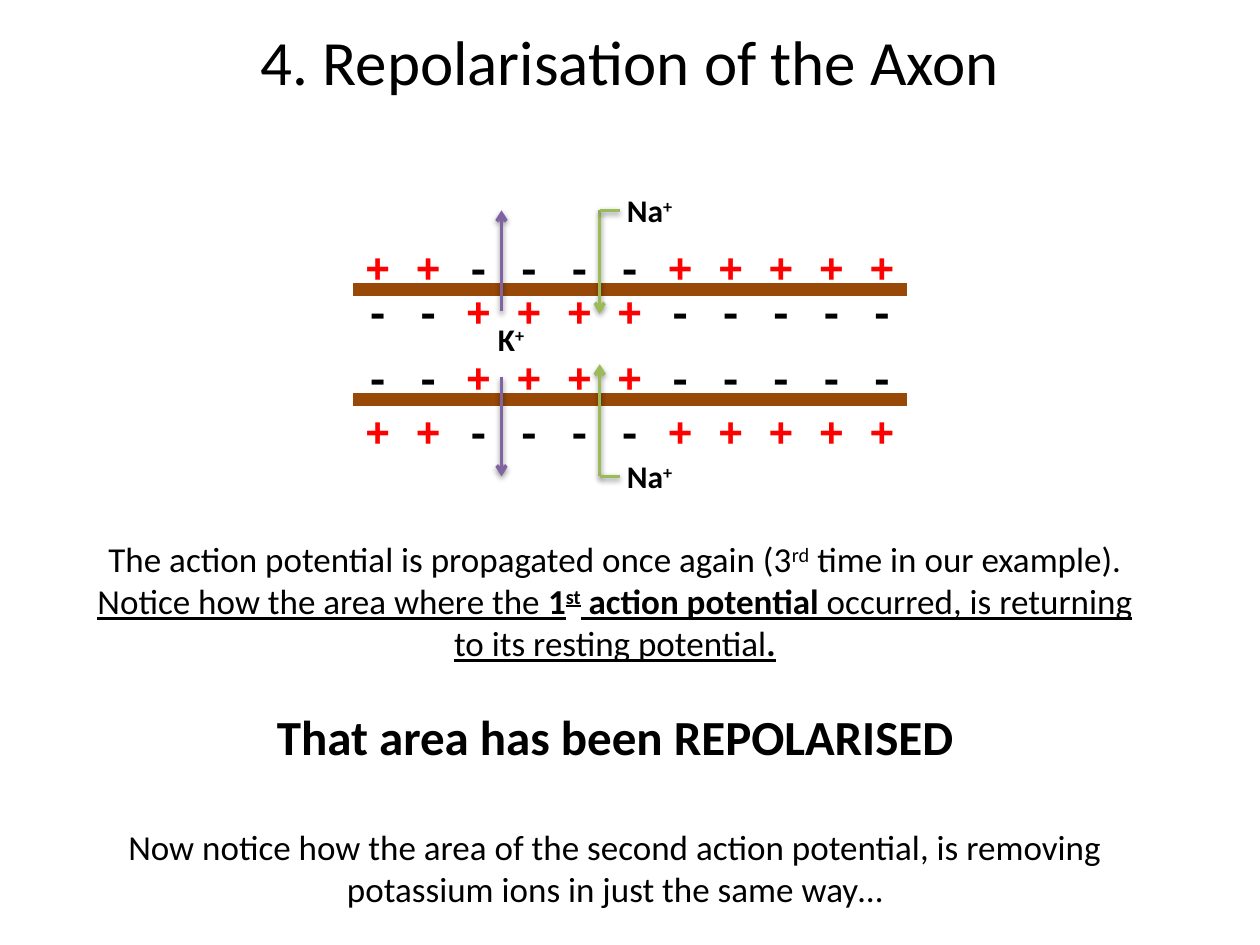
from lxml import etree
from pptx import Presentation
from pptx import util as u
from pptx.dml import color
from pptx.enum import shapes, text
from pptx.oxml import ns

Pt = u.Pt
COLORS = {
    "text": "000000",
    "positive": "FF0000",
    "membrane": "984807",
    "sodium": "9BBB59",
    "potassium": "8064A2",
}
SIGN_COLORS = {"+": "positive", "-": "text"}
REGION_SIZES = (2, 4, 5)  # ion pairs: resting, depolarised, resting
MEMBRANE_LEFT, MEMBRANE_RIGHT = 201.6, 518.4


def rgb(name):
    return color.RGBColor.from_string(COLORS[name])


def add_run(paragraph, content, size, bold=False, underline=False,
            raised=False, font="Calibri", ink="text"):
    run = paragraph.add_run()
    run.text = content
    run.font.name = font
    run.font.size = Pt(size)
    run.font.bold = bold
    run.font.underline = underline
    run.font.color.rgb = rgb(ink)
    if raised:
        run._r.get_or_add_rPr().set("baseline", "30000")


def add_text_box(container, left, top, width, height, centred=True):
    shape = container.add_textbox(Pt(left), Pt(top), Pt(width), Pt(height))
    frame = shape.text_frame
    frame.word_wrap = True
    frame.auto_size = text.MSO_AUTO_SIZE.SHAPE_TO_FIT_TEXT
    if centred:
        frame.paragraphs[0].alignment = text.PP_ALIGN.CENTER
    return frame


def add_ion_label(container, symbol, left, top):
    paragraph = add_text_box(container, left, top, 57, 29).paragraphs[0]
    add_run(paragraph, symbol, 18, bold=True)
    add_run(paragraph, "+", 18, bold=True, raised=True)


def add_line(container, start, end, ink, width, arrow=False, shadow=False):
    line = container.add_connector(
        shapes.MSO_CONNECTOR.STRAIGHT, *(Pt(value) for value in (*start, *end)))
    line.line.color.rgb = rgb(ink)
    line.line.width = Pt(width)
    properties = line._element.spPr
    if arrow:
        etree.SubElement(line.line._get_or_add_ln(), ns.qn("a:tailEnd"), type="arrow")
    effects = etree.SubElement(properties, ns.qn("a:effectLst"))
    if shadow:
        outer = etree.SubElement(
            effects, ns.qn("a:outerShdw"), blurRad=str(Pt(3.1)), dist=str(Pt(1.6)),
            dir="5400000", rotWithShape="0")
        tint = etree.SubElement(outer, ns.qn("a:srgbClr"), val=COLORS["text"])
        etree.SubElement(tint, ns.qn("a:alpha"), val="38000")


def add_charge_row(container, top, resting_sign):
    paragraph = add_text_box(container, MEMBRANE_LEFT, top, 329, 36, False).paragraphs[0]
    reversed_sign = "-" if resting_sign == "+" else "+"
    signs = (resting_sign, reversed_sign, resting_sign)
    for index, (sign, count) in enumerate(zip(signs, REGION_SIZES)):
        gap = " " if index else ""
        add_run(paragraph, gap + " ".join(sign * count), 24, bold=True,
                font="Courier New", ink=SIGN_COLORS[sign])


def add_title(slide):
    title = slide.shapes.title
    title.left, title.top, title.width, title.height = Pt(36), Pt(21), Pt(648), Pt(27)
    frame = title.text_frame
    frame.auto_size = text.MSO_AUTO_SIZE.NONE
    frame.vertical_anchor = text.MSO_ANCHOR.MIDDLE
    frame.paragraphs[0].alignment = text.PP_ALIGN.CENTER
    add_run(frame.paragraphs[0], "4. Repolarisation of the Axon", 36)


def add_explanation(slide):
    frame = add_text_box(slide.shapes, 42.5, 303.8, 617.8, 244.8)
    # Each paragraph: space before, text size, runs with their formats
    paragraphs = [
        (0, 20, [
            ("The action potential is propagated once again (3", {}),
            ("rd", {"raised": True}),
            (" time in our example).", {})]),
        (0, 20, [
            ("Notice how the area where the ", {"underline": True}),
            ("1", {"underline": True, "bold": True}),
            ("st", {"underline": True, "bold": True, "raised": True}),
            (" action potential", {"underline": True, "bold": True}),
            (" occurred, is returning to its resting potential", {"underline": True}),
            (".", {"underline": True, "bold": True})]),
        (24.4, 28, [("That area has been REPOLARISED", {"bold": True})]),
        (34.2, 20, [
            ("Now notice how the area of the second action potential, is removing "
             "potassium ions in just the same way…", {})]),
    ]
    for index, (space, size, runs) in enumerate(paragraphs):
        paragraph = frame.add_paragraph() if index else frame.paragraphs[0]
        paragraph.alignment = text.PP_ALIGN.CENTER
        paragraph.space_before = Pt(space)
        for content, style in runs:
            add_run(paragraph, content, size, **style)


def add_axon(slide):
    axon = slide.shapes.add_group_shape().shapes
    for y in (165.6, 228.2):
        add_line(axon, (MEMBRANE_LEFT, y), (MEMBRANE_RIGHT, y), "membrane", 7.5)
    for top, resting_sign in ((134.6, "+"), (159.8, "-"), (197.3, "-"), (228.2, "+")):
        add_charge_row(axon, top, resting_sign)


def add_ion_flows(slide):
    container = slide.shapes
    add_ion_label(container, "K", 263.5, 179.3)
    # Sodium enters through a bent arrow on each side
    for outside, inside in ((120.2, 179.3), (272.2, 208.1)):
        add_ion_label(container, "Na", 342.7, outside - 14.4)
        add_line(container, (342.7, outside), (342.7, inside), "sodium", 2, True, True)
        add_line(container, (342.7, outside), (354.2, outside), "sodium", 2, shadow=True)
    # Potassium leaves on each side
    for inside, outside in ((177.8, 120.2), (215.3, 272.2)):
        add_line(container, (286.6, inside), (286.6, outside), "potassium", 2, True, True)


def main():
    presentation = Presentation()
    presentation.slide_width, presentation.slide_height = Pt(720), Pt(540)
    slide = presentation.slides.add_slide(presentation.slide_layouts[5])
    add_title(slide)
    add_explanation(slide)
    add_axon(slide)
    add_ion_flows(slide)
    presentation.save("out.pptx")


if __name__ == "__main__":
    main()
